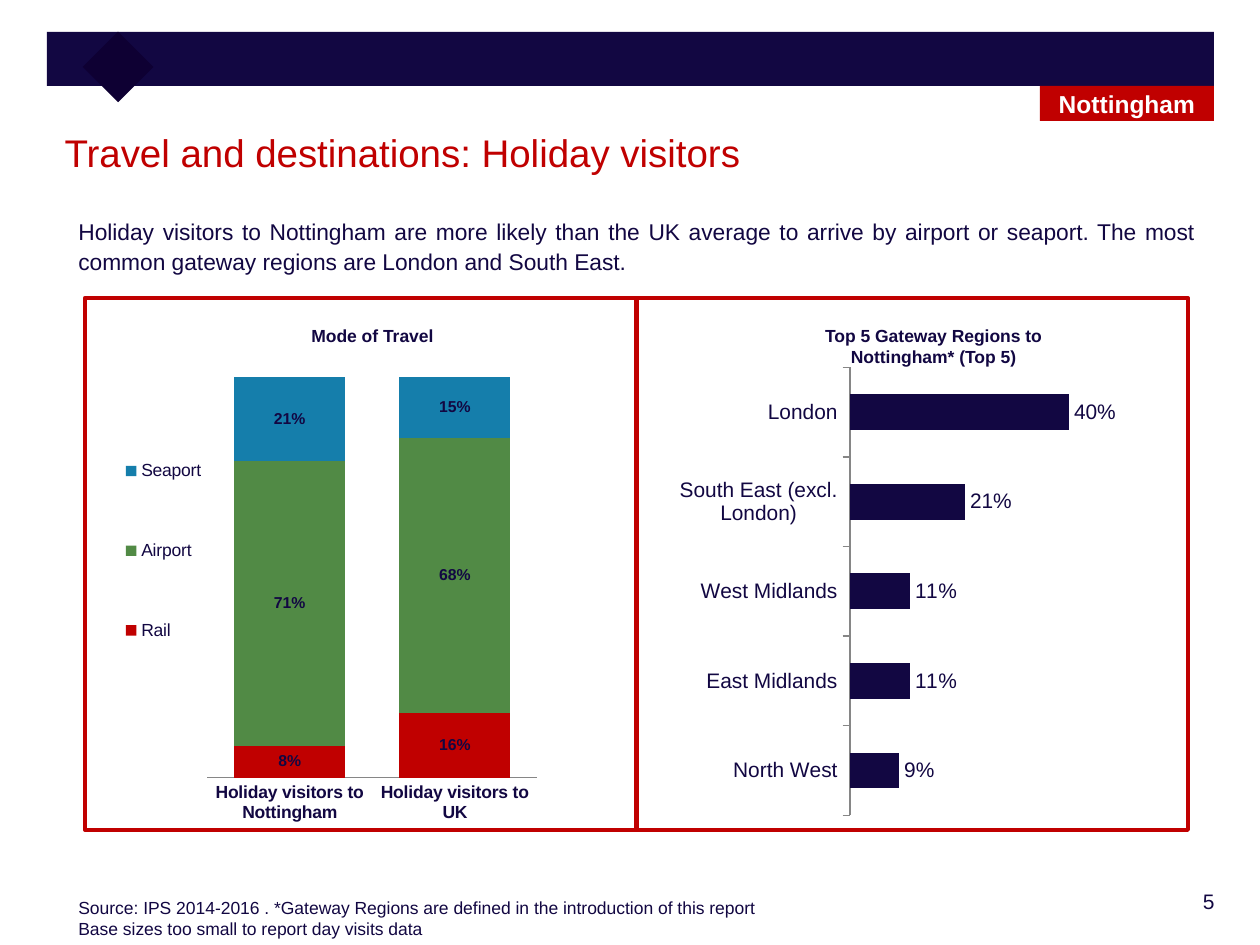
from dataclasses import dataclass

from lxml.etree import SubElement
from pptx import Presentation
from pptx.chart.chart import Chart
from pptx.chart.data import CategoryChartData
from pptx.dml.color import RGBColor
from pptx.enum.chart import XL_CHART_TYPE, XL_LABEL_POSITION, XL_LEGEND_POSITION, XL_TICK_MARK
from pptx.enum.shapes import MSO_SHAPE
from pptx.enum.text import MSO_ANCHOR, PP_ALIGN
from pptx.oxml.ns import qn
from pptx.util import Pt

SCALE = 914400 / 126
NAVY, RED, GREEN, BLUE = "120742", "C00000", "518A45", "157EAB"
WHITE, GREY, DARK = "FFFFFF", "868686", "0E0033"


@dataclass
class Box:
    left: int
    top: int
    width: int
    height: int

    def emu(self) -> list[int]:
        return [px(n) for n in (self.left, self.top, self.width, self.height)]


@dataclass
class Label:
    box: Box
    lines: list[str]
    size: int = 10
    bold: bool = False
    align: PP_ALIGN = PP_ALIGN.LEFT
    space: float | None = None


@dataclass
class Row:
    name: str
    vals: list[float]
    color: str


@dataclass
class Plot:
    box: Box
    kind: XL_CHART_TYPE
    cats: list[str]
    rows: list[Row]
    gap: int
    size: int
    bold: bool
    tick: XL_TICK_MARK
    top: float
    frame: tuple[float, ...]


def px(n: int) -> int:
    return round(n * SCALE)


def rgb(color: str) -> RGBColor:
    return RGBColor.from_string(color)


def style(font, size: int, color: str = NAVY, bold: bool = False) -> None:
    font.name, font.size, font.bold = "Arial", Pt(size), bold
    font.color.rgb = rgb(color)


def write(slide, item: Label) -> None:
    frame = slide.shapes.add_textbox(*item.box.emu()).text_frame
    frame.word_wrap = True
    frame.text = "\n".join(item.lines)
    for para in frame.paragraphs:
        para.alignment = item.align
        para.line_spacing = item.space
        style(para.font, item.size, bold=item.bold)


def block(slide, box: Box, fill: str | None = None, line: str | None = None):
    shape = slide.shapes.add_shape(MSO_SHAPE.RECTANGLE, *box.emu())
    shape.shadow.inherit = False
    if fill:
        shape.fill.solid()
        shape.fill.fore_color.rgb = rgb(fill)
    else:
        shape.fill.background()
    if line:
        shape.line.color.rgb = rgb(line)
        shape.line.width = Pt(2.25)
    else:
        shape.line.fill.background()
    return shape


def place(part, frame: tuple[float, ...], inner: bool = False) -> None:
    layout = part.get_or_add_layout() if hasattr(part, "get_or_add_layout") else part.find(qn("c:layout"))
    if layout is None:
        layout = part.makeelement(qn("c:layout"))
        part.insert(0, layout)
    for child in list(layout):
        layout.remove(child)
    manual = SubElement(layout, qn("c:manualLayout"))
    pairs = [("layoutTarget", "inner")] if inner else []
    pairs += [("xMode", "edge"), ("yMode", "edge"), *zip("xywh", frame)]
    for tag, val in pairs:
        SubElement(manual, qn(f"c:{tag}")).set("val", str(val))


def graph(slide, item: Plot) -> Chart:
    data = CategoryChartData(number_format="0%")
    data.categories = item.cats
    for row in item.rows:
        data.add_series(row.name, row.vals)
    chart = slide.shapes.add_chart(item.kind, *item.box.emu(), data).chart
    style(chart.font, 10)
    chart.has_title = False
    chart.has_legend = False
    cat, val = chart.category_axis, chart.value_axis
    cat.major_tick_mark = item.tick
    cat.format.line.color.rgb = rgb(GREY)
    style(cat.tick_labels.font, item.size, bold=item.bold)
    val.visible = False
    val.has_major_gridlines = False
    val.minimum_scale, val.maximum_scale = 0, item.top
    plot = chart.plots[0]
    plot.gap_width = item.gap
    plot.vary_by_categories = False
    for row, series in zip(item.rows, plot.series):
        series.format.fill.solid()
        series.format.fill.fore_color.rgb = rgb(row.color)
        tags = series.data_labels
        tags.show_value = True
        tags.number_format, tags.number_format_is_linked = "0%", False
        style(tags.font, 9 if item.bold else item.size, bold=item.bold)
    place(chart.element.find(".//" + qn("c:plotArea")), item.frame, True)
    return chart


def main() -> None:
    deck = Presentation()
    deck.slide_width, deck.slide_height = px(1260), px(945)
    slide = deck.slides.add_slide(deck.slide_layouts[5])

    block(slide, Box(47, 32, 1167, 54), NAVY)
    block(slide, Box(93, 42, 50, 50), DARK).rotation = 45

    title = slide.shapes.title
    title.left, title.top, title.width, title.height = Box(52, 123, 1160, 77).emu()
    title.text_frame.text = "Travel and destinations: Holiday visitors"
    title.text_frame.vertical_anchor = MSO_ANCHOR.TOP
    para = title.text_frame.paragraphs[0]
    para.alignment = PP_ALIGN.LEFT
    style(para.font, 22, RED)

    for item in (
        Label(Box(1075, 882, 152, 45), ["5"], 12, align=PP_ALIGN.RIGHT),
        Label(Box(299, 319, 185, 39), ["Mode of Travel"], bold=True),
        Label(Box(66, 210, 1140, 93), [
            "Holiday visitors to Nottingham are more likely than the UK average to arrive "
            "by airport or seaport. The most common gateway regions are London and South East."
        ], 13, align=PP_ALIGN.JUSTIFY, space=1.07),
        Label(Box(800, 319, 267, 58), ["Top 5 Gateway Regions to Nottingham* (Top 5)"],
              bold=True, align=PP_ALIGN.CENTER),
        Label(Box(66, 891, 1144, 55), [
            "Source: IPS 2014-2016 . *Gateway Regions are defined in the introduction of this report",
            "Base sizes too small to report day visits data",
        ]),
    ):
        write(slide, item)

    mode = graph(slide, Plot(
        Box(97, 348, 459, 483), XL_CHART_TYPE.COLUMN_STACKED_100,
        ["Holiday visitors to Nottingham", "Holiday visitors to UK"],
        [Row("Rail", [0.08, 0.16], RED), Row("Airport", [0.71, 0.68], GREEN),
         Row("Seaport", [0.21, 0.15], BLUE)],
        49, 10, True, XL_TICK_MARK.NONE, 1, (0.24, 0.06, 0.72, 0.83)))
    mode.plots[0].overlap = 100
    mode.has_legend = True
    mode.legend.position = XL_LEGEND_POSITION.LEFT
    mode.legend.include_in_layout = False
    style(mode.legend.font, 10)
    place(mode.element.find(".//" + qn("c:legend")), (0.05, 0.11, 0.19, 0.62))

    gate = graph(slide, Plot(
        Box(674, 358, 442, 467), XL_CHART_TYPE.BAR_CLUSTERED,
        ["London", "South East (excl. London)", "West Midlands", "East Midlands", "North West"],
        [Row("Series 1", [0.4, 0.21, 0.11, 0.11, 0.09], NAVY)],
        150, 12, False, XL_TICK_MARK.OUTSIDE, 0.45, (0.4, 0.02, 0.56, 0.96)))
    gate.category_axis.reverse_order = True
    gate.plots[0].series[0].data_labels.position = XL_LABEL_POSITION.OUTSIDE_END

    for left in (85, 636):
        block(slide, Box(left, 298, 552, 532), line=RED)

    badge = block(slide, Box(1040, 86, 174, 35), RED)
    frame = badge.text_frame
    frame.text = "Nottingham"
    frame.vertical_anchor = MSO_ANCHOR.MIDDLE
    frame.paragraphs[0].alignment = PP_ALIGN.CENTER
    style(frame.paragraphs[0].font, 14, WHITE, True)

    deck.save("out.pptx")


if __name__ == "__main__":
    main()
